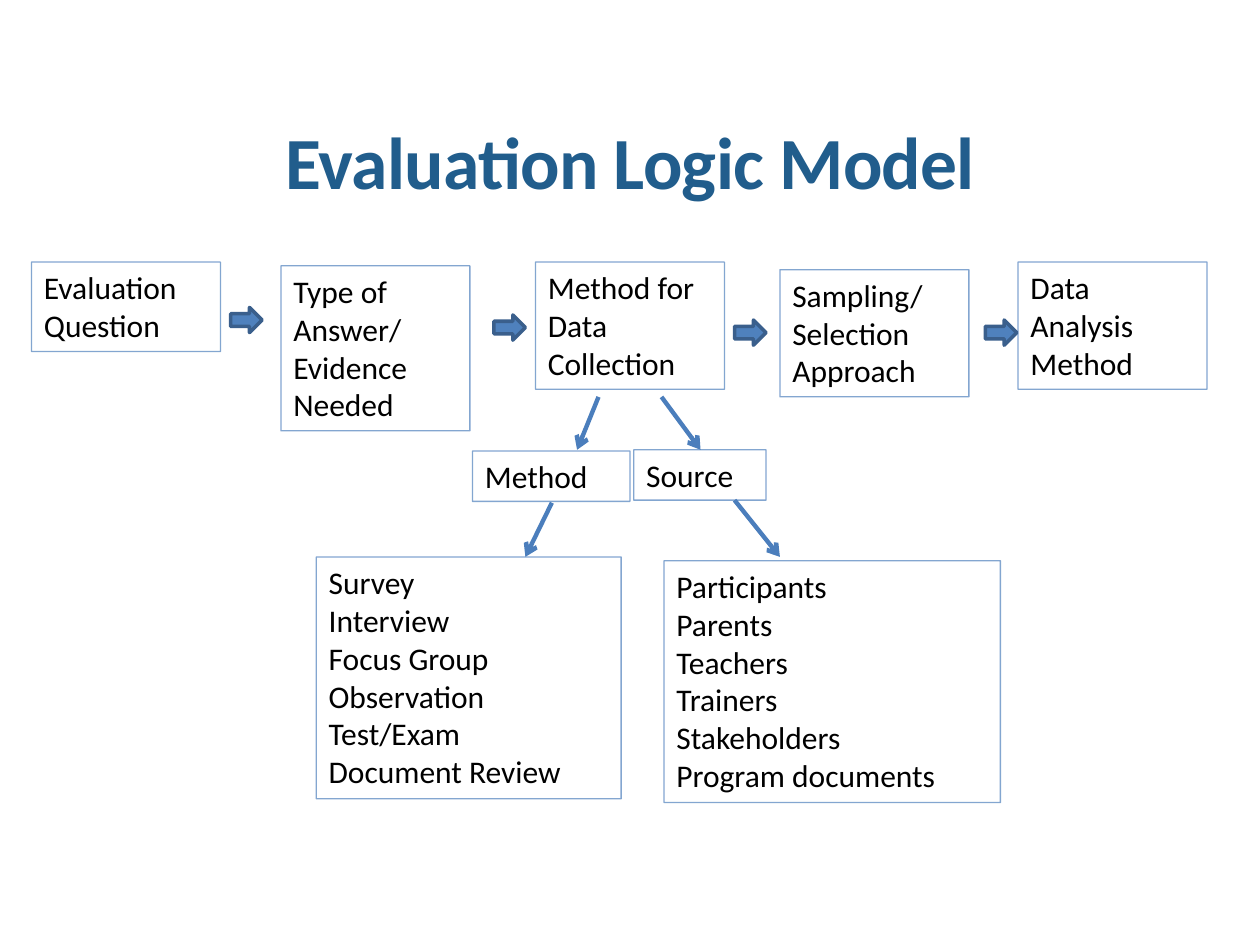
"""Build the Evaluation Logic Model slide."""
from pptx import Presentation
from pptx.dml.color import RGBColor
from pptx.enum.shapes import MSO_CONNECTOR, MSO_SHAPE
from pptx.enum.text import MSO_ANCHOR, MSO_AUTO_SIZE, PP_ALIGN
from pptx.oxml.ns import qn
from pptx.util import Inches, Pt
from lxml import etree


def rgb(value):
    return RGBColor.from_string(value)


def write(tf, text, size=18, color="000000", bold=False, align=PP_ALIGN.LEFT, spacing=None):
    tf.word_wrap = True
    tf.vertical_anchor = MSO_ANCHOR.TOP
    for i, line in enumerate(text.split("\n")):
        p = tf.paragraphs[0] if i == 0 else tf.add_paragraph()
        p.alignment = align
        r = p.add_run()
        r.text = line
        r.font.name = "Calibri"
        r.font.size = Pt(size)
        r.font.bold = bold
        r.font.color.rgb = rgb(color)
        if spacing is not None:
            r.font._element.set("spc", str(round(spacing * 100)))


prs = Presentation()
prs.slide_width = Inches(10)
prs.slide_height = Inches(7.5)
s = prs.slides.add_slide(prs.slide_layouts[6])

title = s.shapes.add_textbox(Inches(0.5), Inches(0.92), Inches(9), Inches(1.25))
tf = title.text_frame
tf.margin_left = tf.margin_right = tf.margin_top = tf.margin_bottom = 0
write(tf, "Evaluation Logic Model", size=42, color="215D8C", bold=True,
      align=PP_ALIGN.CENTER, spacing=-0.4)

boxes = [
    (0.25, 2.08, 1.5, 0.71, "Evaluation Question"),
    (2.23, 2.11, 1.5, 1.31, "Type of Answer/ Evidence Needed"),
    (4.25, 2.08, 1.5, 1.01, "Method for Data Collection"),
    (6.19, 2.14, 1.5, 1.01, "Sampling/ Selection Approach"),
    (8.08, 2.08, 1.5, 1.01, "Data Analysis Method"),
    (3.75, 3.58, 1.25, 0.4, "Method"),
    (5.03, 3.57, 1.05, 0.4, "Source"),
    (2.51, 4.42, 2.42, 1.92,
     "Survey\nInterview\nFocus Group\nObservation\nTest/Exam\nDocument Review"),
    (5.27, 4.45, 2.67, 1.92,
     "Participants\nParents\nTeachers\nTrainers\nStakeholders\nProgram documents"),
]
for x, y, w, h, text in boxes:
    sp = s.shapes.add_shape(MSO_SHAPE.RECTANGLE, Inches(x), Inches(y), Inches(w), Inches(h))
    sp.shadow.inherit = False
    sp.fill.background()
    sp.line.color.rgb = rgb("4F81BD")
    sp.line.width = Pt(0.75)
    color = sp.line._ln.find(".//" + qn("a:srgbClr"))
    etree.SubElement(color, qn("a:alpha"), val="70000")
    write(sp.text_frame, text)
    sp.text_frame.auto_size = MSO_AUTO_SIZE.SHAPE_TO_FIT_TEXT

for x, y in [(1.83, 2.44), (3.92, 2.5), (5.83, 2.54), (7.82, 2.54)]:
    sp = s.shapes.add_shape(MSO_SHAPE.RIGHT_ARROW, Inches(x), Inches(y), Inches(0.25), Inches(0.2))
    sp.shadow.inherit = False
    sp.fill.solid()
    sp.fill.fore_color.rgb = rgb("4F81BD")
    sp.line.color.rgb = rgb("3A5F8C")
    sp.line.width = Pt(2)

links = [
    (4.75, 3.15, 4.58, 3.57),
    (5.25, 3.15, 5.56, 3.57),
    (4.38, 3.99, 4.17, 4.42),
    (5.83, 3.97, 6.19, 4.42),
]
for points in links:
    cxn = s.shapes.add_connector(MSO_CONNECTOR.STRAIGHT, *[Inches(v) for v in points])
    cxn.line.color.rgb = rgb("4B7EBC")
    cxn.line.width = Pt(2.5)
    etree.SubElement(cxn.line._ln, qn("a:tailEnd"), type="arrow")
    etree.SubElement(cxn._element.spPr, qn("a:effectLst"))

prs.save("out.pptx")
